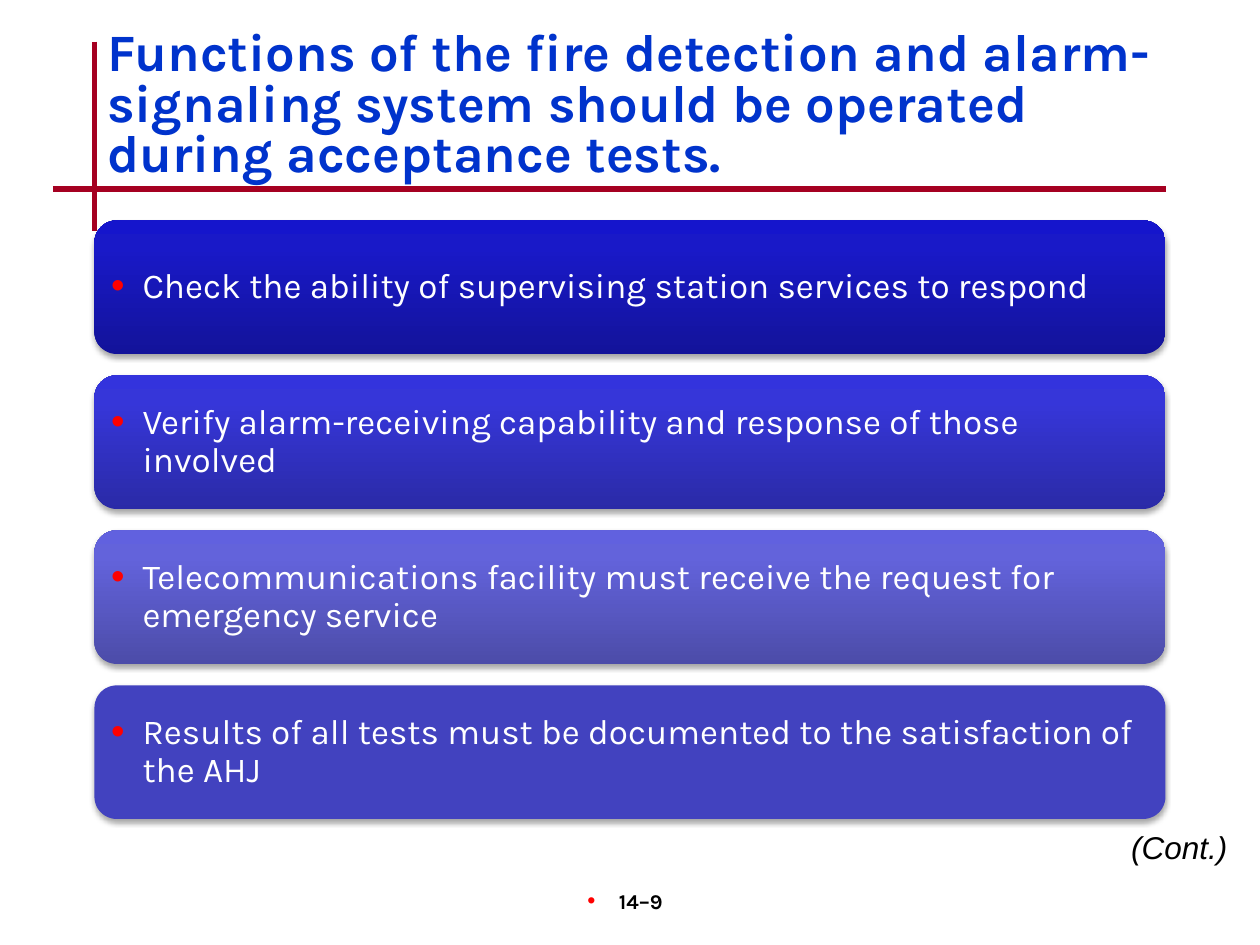
import copy
from dataclasses import dataclass

import pptx
import pptx.dml.color
import pptx.enum.shapes
import pptx.enum.text
import pptx.oxml
import pptx.oxml.ns
import pptx.util
from pptx.util import Inches

ALIGN = pptx.enum.text.PP_ALIGN
ANCHOR = pptx.enum.text.MSO_ANCHOR
A_NS = 'xmlns:a="http://schemas.openxmlformats.org/drawingml/2006/main"'


@dataclass(frozen=True)
class Theme:
    font: str = "Karla"
    note_font: str = "Arial"
    title: str = "0033CC"
    rule: str = "A50021"
    bullet: str = "FF0000"
    text: str = "000000"
    card_text: str = "FFFFFF"
    title_size: int = 30
    card_size: int = 20
    note_size: int = 18
    number_size: int = 12


def rgb(value):
    return pptx.dml.color.RGBColor.from_string(value)


class SlideBuilder:
    def __init__(self, slide, theme):
        self.slide = slide
        self.theme = theme

    def add_run(self, paragraph, text, size, color, font=None, bold=False, italic=False):
        run = paragraph.add_run()
        run.text = text
        run.font.name = font or self.theme.font
        run.font.size = pptx.util.Pt(size)
        run.font.bold = bold
        run.font.italic = italic
        run.font.color.rgb = rgb(color)

    def indent(self, paragraph, hanging, bulleted=True):
        """Set a hanging indent, with a red bullet unless told otherwise."""
        properties = paragraph._p.get_or_add_pPr()
        properties.set("marL", str(hanging))
        properties.set("indent", str(-hanging))
        if bulleted:
            for tag in (
                f'<a:buClr {A_NS}><a:srgbClr val="{self.theme.bullet}"/></a:buClr>',
                f'<a:buSzPct {A_NS} val="110000"/>',
                f'<a:buFont {A_NS} typeface="Arial"/>',
                f'<a:buChar {A_NS} char="•"/>',
            ):
                properties.append(pptx.oxml.parse_xml(tag))

    def title(self, text, left, top, width, height):
        title = self.slide.shapes.title
        title.left, title.top, title.width, title.height = left, top, width, height
        frame = title.text_frame
        frame.word_wrap = True
        frame.auto_size = pptx.enum.text.MSO_AUTO_SIZE.NONE
        frame.vertical_anchor = ANCHOR.TOP
        paragraph = frame.paragraphs[0]
        paragraph.alignment = ALIGN.LEFT
        paragraph.line_spacing = 0.8
        self.add_run(paragraph, text, self.theme.title_size, self.theme.title, bold=True)

    def rule(self, x1, y1, x2, y2):
        line = self.slide.shapes.add_connector(
            pptx.enum.shapes.MSO_CONNECTOR.STRAIGHT, x1, y1, x2, y2)
        line.line.color.rgb = rgb(self.theme.rule)
        line.line.width = pptx.util.Pt(3)
        line._element.spPr.append(pptx.oxml.parse_xml(f"<a:effectLst {A_NS}/>"))

    def fill(self, shape, colors):
        """Fill with one colour, or with three running from bottom to top."""
        if len(colors) == 1:
            shape.fill.solid()
            shape.fill.fore_color.rgb = rgb(colors[0])
            return
        shape.fill.gradient()
        shape.fill.gradient_angle = 90
        stop_list = shape._element.spPr.find(".//" + pptx.oxml.ns.qn("a:gsLst"))
        stop_list.insert(1, copy.deepcopy(stop_list[0]))
        for stop, color, position in zip(shape.fill.gradient_stops, colors, (0, 0.8, 1)):
            stop.color.rgb = rgb(color)
            stop.position = position

    def card(self, text, colors, left, top, width, height):
        card = self.slide.shapes.add_shape(
            pptx.enum.shapes.MSO_SHAPE.ROUNDED_RECTANGLE, left, top, width, height)
        self.fill(card, colors)
        card.line.fill.background()
        card._element.spPr.append(pptx.oxml.parse_xml(
            f'<a:effectLst {A_NS}><a:outerShdw blurRad="40000" dist="23000" dir="5400000" '
            'rotWithShape="0"><a:srgbClr val="000000"><a:alpha val="35000"/></a:srgbClr>'
            "</a:outerShdw></a:effectLst>"))
        frame = card.text_frame
        frame.word_wrap = True
        frame.vertical_anchor = ANCHOR.MIDDLE
        frame.margin_left = frame.margin_right = Inches(0.08)
        frame.margin_top = frame.margin_bottom = Inches(0.08)
        paragraph = frame.paragraphs[0]
        paragraph.alignment = ALIGN.LEFT
        paragraph.line_spacing = 0.9
        self.indent(paragraph, Inches(0.25))
        self.add_run(paragraph, text, self.theme.card_size, self.theme.card_text)

    def text_line(self, left, top, width, height, align, hanging, bulleted):
        """Add an empty one-line text box and return its paragraph."""
        box = self.slide.shapes.add_textbox(left, top, width, height)
        box.text_frame.word_wrap = True
        paragraph = box.text_frame.paragraphs[0]
        paragraph.alignment = align
        self.indent(paragraph, hanging, bulleted)
        return paragraph

    def page_number(self, text, left, top, width, height):
        paragraph = self.text_line(left, top, width, height, ALIGN.CENTER, Inches(0.25), True)
        self.add_run(paragraph, text, self.theme.number_size, self.theme.text, bold=True)

    def continuation(self, text, left, top, width, height):
        paragraph = self.text_line(left, top, width, height, ALIGN.RIGHT, Inches(0.38), False)
        self.add_run(paragraph, text, self.theme.note_size, self.theme.text,
                     font=self.theme.note_font, italic=True)


CARDS = [
    ("Check the ability of supervising station services to respond",
     ("13139A", "1919C8", "1515CC")),
    ("Verify alarm-receiving capability and response of those involved",
     ("2A2AA7", "3636D9", "3333DD")),
    ("Telecommunications facility must receive the request for emergency service",
     ("4C4CA9", "6363DB", "6161DF")),
    ("Results of all tests must be documented to the satisfaction of the AHJ",
     ("4242BF",)),
]


def main():
    presentation = pptx.Presentation()
    presentation.slide_width = Inches(10)
    presentation.slide_height = Inches(7.5)
    title_only = presentation.slide_layouts[5]
    builder = SlideBuilder(presentation.slides.add_slide(title_only), Theme())

    left, width = Inches(0.75), Inches(8.5)
    builder.rule(left, Inches(0.33), left, Inches(1.83))
    builder.rule(Inches(0.42), Inches(1.5), left + width, Inches(1.5))
    builder.title("Functions of the fire detection and alarm-signaling system should be "
                  "operated during acceptance tests.", left, Inches(0.2), width, Inches(1))

    first_top, pitch, card_height = Inches(1.75), Inches(1.23), Inches(1.06)
    for index, (text, colors) in enumerate(CARDS):
        builder.card(text, colors, left, first_top + index * pitch, width, card_height)

    builder.continuation("(Cont.)", Inches(8.17), Inches(6.52), Inches(1.67), Inches(0.4))
    builder.page_number("14–9", Inches(3.92), Inches(7), Inches(2.08), Inches(0.5))
    presentation.save("out.pptx")


if __name__ == "__main__":
    main()
